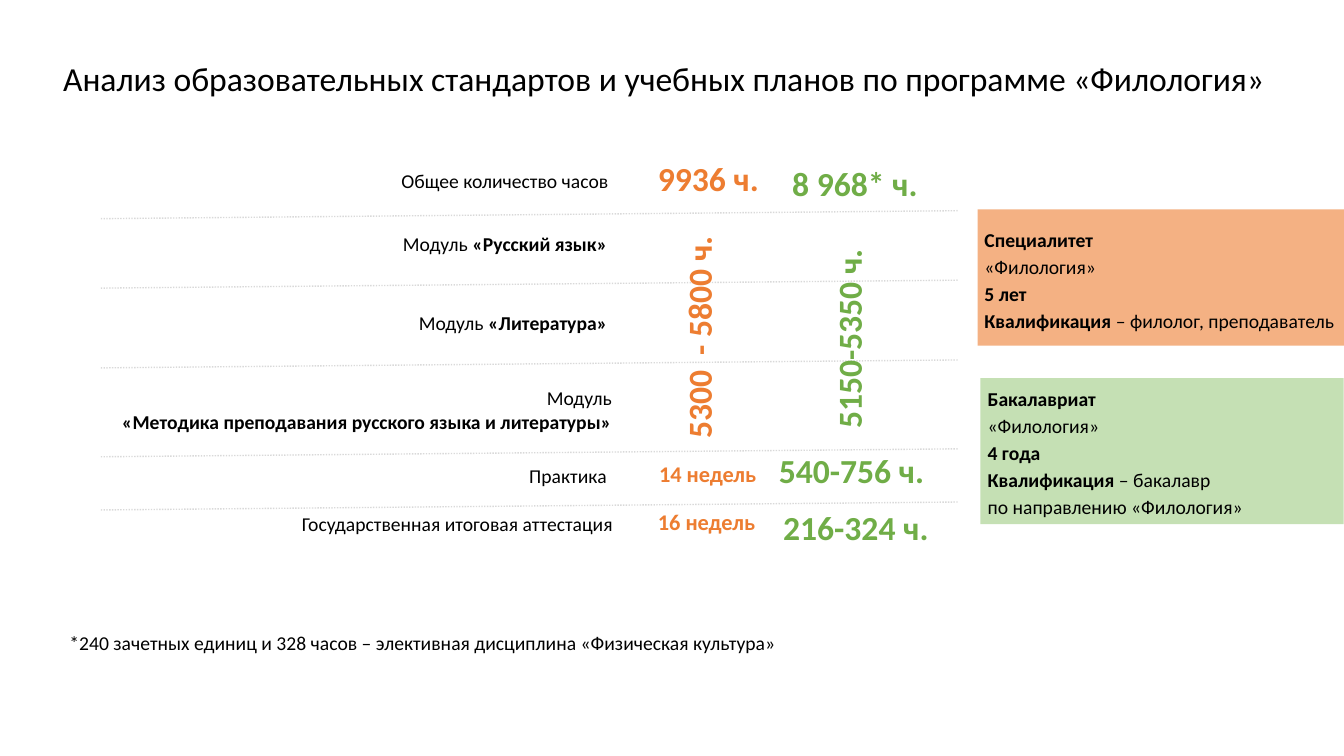
from lxml import etree
from pptx import Presentation
from pptx.dml.color import RGBColor
from pptx.enum.dml import MSO_LINE
from pptx.enum.shapes import MSO_CONNECTOR, MSO_SHAPE
from pptx.enum.text import MSO_ANCHOR, MSO_AUTO_SIZE, PP_ALIGN
from pptx.oxml.ns import qn
from pptx.util import Cm, Pt

BLACK, ORANGE, GREEN = "000000", "ED7D31", "70AD47"
LEFT, CENTER, RIGHT = PP_ALIGN.LEFT, PP_ALIGN.CENTER, PP_ALIGN.RIGHT


def paint(target, color):
    """Colour a font, or a fill once it is solid."""
    getattr(target, "color", None).rgb = RGBColor.from_string(color)


def add_text(box, lines, size=14, color=BLACK, align=LEFT, wrap=True, loose=False):
    """Add a text box; each line is a list of (text, bold) pieces."""
    label = slide.shapes.add_textbox(*map(Cm, box))
    frame = label.text_frame
    frame.word_wrap = wrap
    frame.auto_size = MSO_AUTO_SIZE.SHAPE_TO_FIT_TEXT
    paragraph = frame.paragraphs[0]
    paragraph.alignment = align
    if loose:
        paragraph.line_spacing = 1.15
        paragraph.space_after = Pt(10)
    for number, line in enumerate(lines):
        if number:
            paragraph.add_line_break()
        for text, bold in line:
            run = paragraph.add_run()
            run.text = text
            run.font.name, run.font.size, run.font.bold = "Calibri", Pt(size), bold
            paint(run.font, color)
    return label


deck = Presentation()
deck.slide_width, deck.slide_height = Cm(33.87), Cm(19.05)
slide = deck.slides.add_slide(deck.slide_layouts[5])

# Title
title = slide.shapes.title
title.left, title.top, title.width, title.height = Cm(-1.27), Cm(1.32), Cm(36), Cm(1.3)
title.text_frame.text = "Анализ образовательных стандартов и учебных планов по программе «Филология»"
title.text_frame.vertical_anchor = MSO_ANCHOR.MIDDLE
title.text_frame.paragraphs[0].alignment = CENTER
title_font = title.text_frame.paragraphs[0].runs[0].font
title_font.name, title_font.size, title_font.bold = "Calibri", Pt(24), False
paint(title_font, BLACK)

# Programme cards: panel, then the text over it
programmes = [
    ("F4B183", (24.64, 5.28, 9.23, 3.43), (24.56, 5.54, 17.22, 4.06), [
        [("Специалитет", True)],
        [("«Филология»", False)],
        [("5 лет", True)],
        [("Квалификация", True), (" – филолог, преподаватель", False)]]),
    ("C5E0B4", (24.71, 9.53, 9.15, 3.68), (24.64, 9.53, 18.19, 3.71), [
        [("Бакалавриат", True)],
        [("«Филология»", False)],
        [("4 года", True)],
        [("Квалификация", True), (" – бакалавр", False)],
        [("по направлению «Филология»", False)]]),
]
for tint, panel_box, text_box, lines in programmes:
    panel = slide.shapes.add_shape(MSO_SHAPE.RECTANGLE, *map(Cm, panel_box))
    panel.shadow.inherit = False
    panel.fill.solid()
    panel.fill.fore_color.rgb = RGBColor.from_string(tint)
    panel.line.fill.background()
    add_text(text_box, lines, loose=True)

# Dotted row separators, slightly rising to the right
for start in (5.51, 7.26, 9.27, 11.51, 12.85):
    separator = slide.shapes.add_connector(
        MSO_CONNECTOR.STRAIGHT, Cm(2.54), Cm(start), Cm(24.13), Cm(start - 0.2))
    paint(separator.line, "D9D9D9")
    separator.line.width = Pt(1)
    separator.line.dash_style = MSO_LINE.ROUND_DOT
    etree.SubElement(separator._element.spPr, qn("a:effectLst"))

# Row labels
row_labels = [
    (-1.35, 4.14, [[("Общее количество часов", False)]]),
    (-1.27, 5.72, [[("Модуль", False), (" «Русский язык» ", True)]]),
    (-1.27, 7.7, [[("Модуль", False), (" «Литература» ", True)]]),
    (-1.27, 9.6, [[("Модуль", False)],
                  [("«Методика преподавания русского языка и литературы»", True)]]),
    (-1.4, 11.56, [[("Практика", False)]]),
    (-1.24, 12.78, [[("Государственная итоговая аттестация", False)]]),
]
for left, top, lines in row_labels:
    add_text((left, top, 16.94, 0.86 + 0.58 * (len(lines) - 1)), lines, align=RIGHT)

# Specialist hours
for text, size, box in [
    ("9936 ч.", 24, (16.33, 3.86, 3.07, 1.27)),
    ("14 недель", 16, (16.36, 11.48, 3, 0.94)),
    ("16 недель", 16, (16.33, 12.67, 3, 0.94)),
]:
    add_text(box, [[(text, True)]], size, ORANGE, wrap=False)

# Bachelor hours
for text, box in [
    ("8 968* ч.", (19.69, 3.84, 3.71, 1.45)),
    ("540-756 ч.", (19.35, 11.07, 4.22, 1.37)),
    ("216-324 ч.", (19.46, 12.5, 4.22, 1.37)),
]:
    add_text(box, [[(text, True)]], 24, GREEN, CENTER, wrap=False, loose=True)

# Hours shared by the three modules, read upwards
specialist_modules = add_text((14.76, 7.82, 5.69, 1.27), [[("5300  - 5800 ч.", True)]], 24, ORANGE)
bachelor_modules = add_text((18.8, 7.82, 5.05, 1.45), [[("5150-5350 ч.", True)]],
                            24, GREEN, CENTER, loose=True)
specialist_modules.rotation = bachelor_modules.rotation = 270

# Footnote
add_text((1.5, 15.77, 20.5, 0.86), [[(
    "*240 зачетных единиц и 328 часов – элективная дисциплина «Физическая культура»", False)]])

deck.save("out.pptx")
